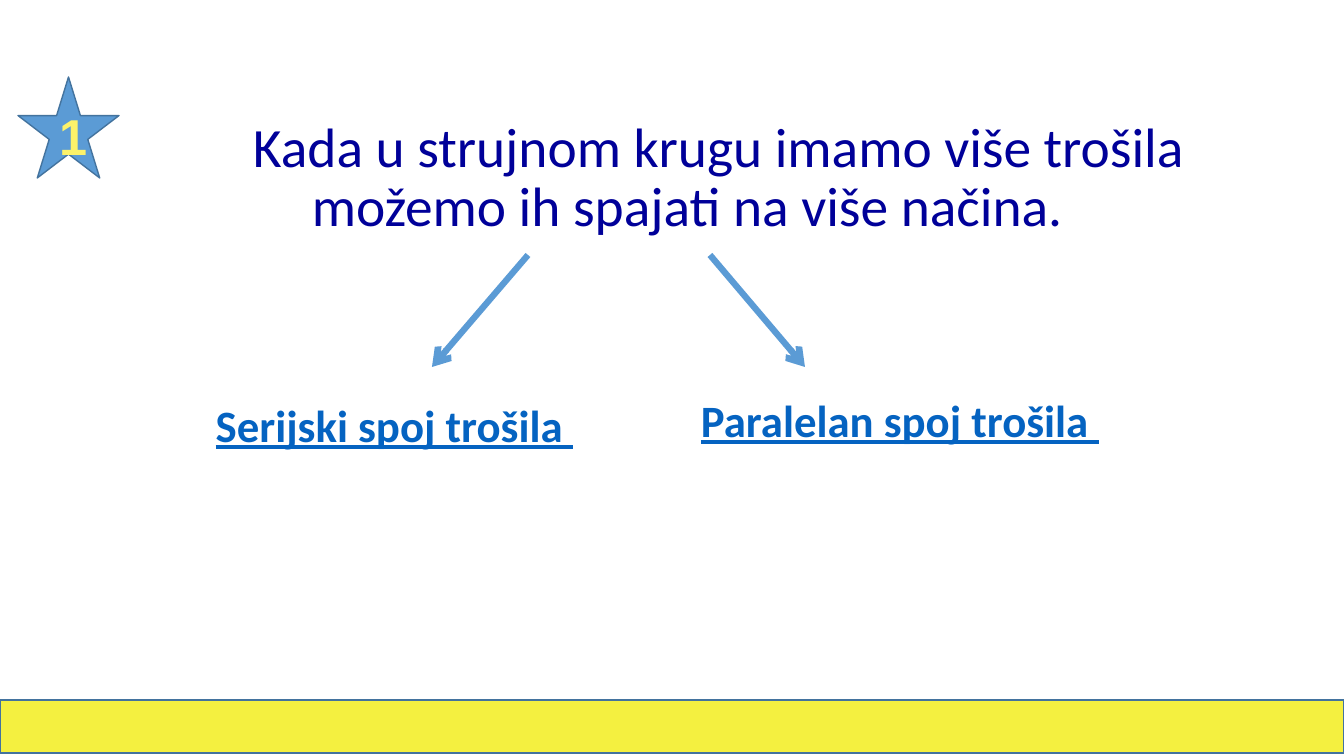
from dataclasses import dataclass

from lxml.etree import SubElement
from pptx import Presentation
from pptx.dml.color import RGBColor
from pptx.enum.shapes import MSO_CONNECTOR as Connector, MSO_SHAPE as Shape
from pptx.enum.text import MSO_ANCHOR as Anchor, PP_ALIGN as Align
from pptx.oxml.ns import qn
from pptx.util import Emu, Pt


@dataclass(frozen=True)
class Theme:
    band: str = "F4F040"
    accent: str = "5B9BD5"
    outline: str = "43739E"
    title: str = "000099"
    number: str = "FCF26A"
    label: str = "0563C1"
    title_size: float = 39.6
    number_size: float = 36
    label_size: float = 32
    outline_width: float = 1
    arrow_width: float = 4.5
    body_font: str = "Calibri"
    number_font: str = "Arial"


class SlideBuilder:
    def __init__(self, page, theme):
        self.page = page
        self.theme = theme

    @staticmethod
    def px(*lengths):
        return [Emu(round(length * 914400 / 100.8)) for length in lengths]

    def fill_text(self, frame, text, size, color, font, align, bold=False, underline=None):
        frame.word_wrap = True
        para = frame.paragraphs[0]
        para.alignment = align
        para.add_run().text = text
        para.font.name = font
        para.font.size = Pt(size)
        para.font.bold = bold
        para.font.underline = underline
        para.font.color.rgb = RGBColor.from_string(color)
        return para

    def shape(self, kind, bounds, fill):
        box = self.page.shapes.add_shape(kind, *self.px(*bounds))
        box.shadow.inherit = False
        box.fill.solid()
        box.fill.fore_color.rgb = RGBColor.from_string(fill)
        box.line.color.rgb = RGBColor.from_string(self.theme.outline)
        box.line.width = Pt(self.theme.outline_width)
        return box

    def band(self, bounds):
        self.shape(Shape.RECTANGLE, bounds, self.theme.band)

    def star(self, bounds, number):
        theme = self.theme
        frame = self.shape(Shape.STAR_5_POINT, bounds, theme.accent).text_frame
        frame.vertical_anchor = Anchor.MIDDLE
        self.fill_text(frame, number, theme.number_size, theme.number,
                       theme.number_font, Align.CENTER, bold=True)

    def title(self, bounds, text):
        theme = self.theme
        frame = self.page.shapes.add_textbox(*self.px(*bounds)).text_frame
        frame.vertical_anchor = Anchor.MIDDLE
        para = self.fill_text(frame, text, theme.title_size, theme.title,
                              theme.body_font, Align.CENTER)
        para.line_spacing = 0.9

    def label(self, bounds, text, align):
        theme = self.theme
        frame = self.page.shapes.add_textbox(*self.px(*bounds)).text_frame
        self.fill_text(frame, text, theme.label_size, theme.label,
                       theme.body_font, align, bold=True, underline=True)

    def arrow(self, start, end):
        arrow = self.page.shapes.add_connector(Connector.STRAIGHT, *self.px(*start, *end))
        arrow.line.color.rgb = RGBColor.from_string(self.theme.accent)
        arrow.line.width = Pt(self.theme.arrow_width)
        properties = arrow._element.spPr
        SubElement(properties.find(qn("a:ln")), qn("a:tailEnd"), type="arrow")
        SubElement(properties, qn("a:effectLst"))


def main():
    deck = Presentation()
    deck.slide_width, deck.slide_height = SlideBuilder.px(1344, 756)
    page = deck.slides.add_slide(deck.slide_layouts[6])
    builder = SlideBuilder(page, Theme())

    builder.band((0, 700, 1344, 53))
    builder.title((147, 121, 1093, 116),
                  "\tKada u strujnom krugu imamo više trošila možemo ih spajati na više načina. ")
    builder.star((18, 77, 101, 101), "1")
    builder.arrow((528, 255), (432, 367))
    builder.arrow((710, 255), (805, 367))
    builder.label((184, 393, 421, 64), "Serijski spoj trošila ", Align.CENTER)
    builder.label((691, 388, 445, 64), "Paralelan spoj trošila ", Align.LEFT)

    deck.save("out.pptx")


if __name__ == "__main__":
    main()
